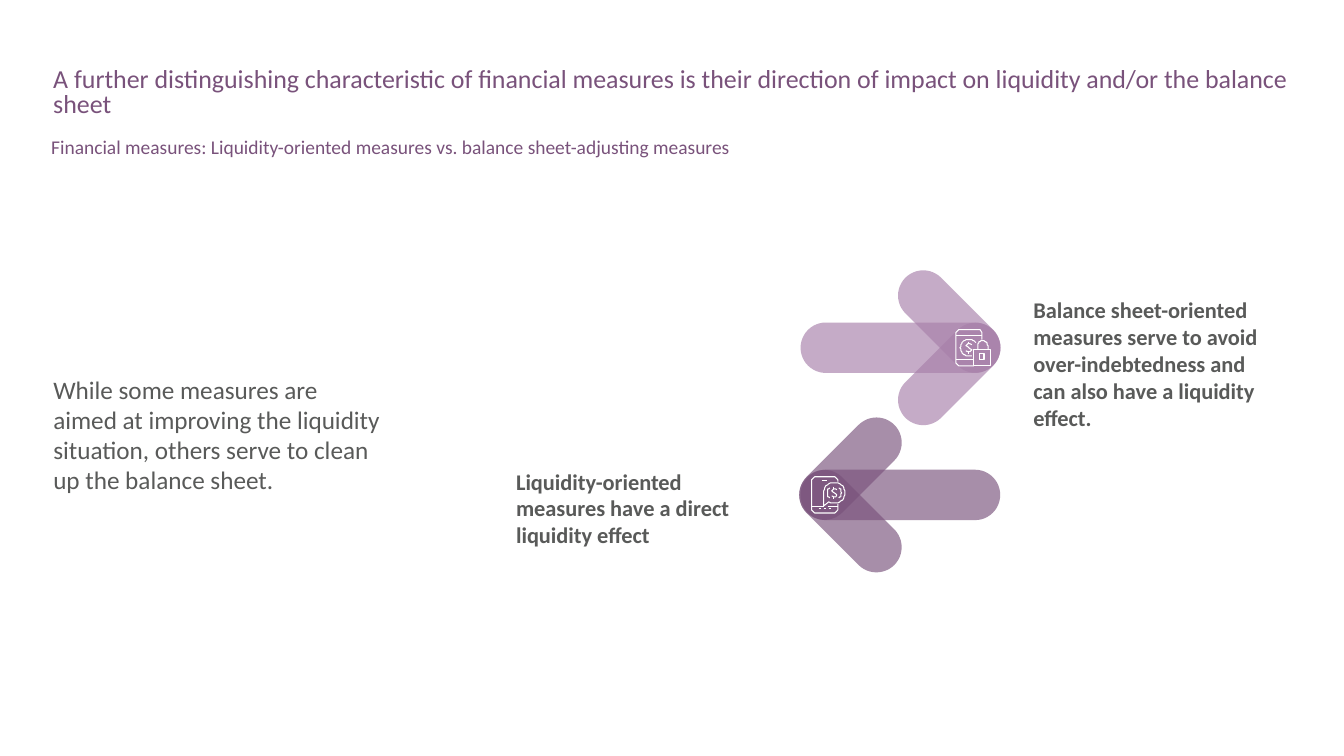
import dataclasses
import math

import lxml.etree
import pptx
import pptx.dml.color
import pptx.enum.shapes
import pptx.enum.text
import pptx.oxml.ns
import pptx.util

Inches = pptx.util.Inches
Anchor = pptx.enum.text.MSO_ANCHOR


@dataclasses.dataclass(frozen=True)
class Theme:
    """Colours, font and type sizes of the slide."""
    font: str = "Calibri"
    grey: str = "595A59"
    plum: str = "79527B"
    lilac: str = "A77FA9"
    white: str = "FFFFFF"
    title: float = 18.5
    subtitle: float = 13.9
    body: float = 18
    label: float = 16
    stroke: float = 0.75
    opacity: int = 65


def colour(value):
    """Turn a hex string into a colour."""
    return pptx.dml.color.RGBColor.from_string(value)


def apply(target, values):
    """Set every named format value on the target."""
    for name, value in values.items():
        setattr(target, name, value)


def arc(x, y, radius, start, end):
    """Return points along an arc, with angles clockwise in degrees."""
    steps = max(2, round(abs(end - start) / 10))
    angles = [math.radians(start + (end - start) * i / steps) for i in range(steps + 1)]
    return [(x + radius * math.cos(a), y + radius * math.sin(a)) for a in angles]


def box(left, top, right, bottom):
    """Return a closed rectangular stroke."""
    return [(left, top), (right, top), (right, bottom), (left, bottom), (left, top)]


def dollar(x, y):
    """Return the strokes of a dollar sign centred on a point."""
    curve = [(2.5, -3), (1, -4.3), (-1, -4.3), (-2.5, -2.5), (-1.5, -0.6),
             (1.5, 0.6), (2.5, 2.5), (1, 4.3), (-1, 4.3), (-2.5, 3)]
    strokes = [curve, [(0, -6), (0, -4.3)], [(0, 4.3), (0, 6)]]
    return [[(x + dx, y + dy) for dx, dy in stroke] for stroke in strokes]


class SlideBuilder:
    """Draws themed elements on the current slide."""

    def __init__(self, slide, theme):
        self.slide = slide
        self.theme = theme

    def text(self, bounds, words, size, tint, bold=False, spacing=None, anchor=Anchor.TOP):
        """Add a wrapped text box."""
        shape = self.slide.shapes.add_textbox(*map(Inches, bounds))
        frame = shape.text_frame
        apply(frame, {"word_wrap": True, "vertical_anchor": anchor})
        paragraph = frame.paragraphs[0]
        paragraph.text = words
        apply(paragraph, {"line_spacing": spacing})
        for run in paragraph.runs:
            apply(run.font, {"name": self.theme.font, "size": pptx.util.Pt(size), "bold": bold})
            run.font.color.rgb = colour(tint)

    def bar(self, left, top, width, rotation, tint):
        """Add a translucent bar with round ends."""
        kind = pptx.enum.shapes.MSO_SHAPE.ROUNDED_RECTANGLE
        shape = self.slide.shapes.add_shape(kind, *map(Inches, (left, top, width, 0.5)))
        shape.adjustments[0] = 0.5
        shape.rotation = rotation
        shape.shadow.inherit = False
        shape.fill.solid()
        shape.fill.fore_color.rgb = colour(tint)
        shape.line.fill.background()
        tint_element = shape.fill._xPr.find(".//" + pptx.oxml.ns.qn("a:srgbClr"))
        alpha = lxml.etree.SubElement(tint_element, pptx.oxml.ns.qn("a:alpha"))
        alpha.set("val", str(self.theme.opacity * 1000))

    def arrow(self, shaft_left, shaft_top, head_left, turn, tint):
        """Add an arrow made of a shaft and two slanted bars."""
        self.bar(shaft_left, shaft_top, 1.98, turn, tint)
        side = 1 if turn == 0 else -1
        for slant, offset in ((315, 0.26), (45, -0.26)):
            self.bar(head_left, shaft_top + side * offset, 1.23, (slant + turn) % 360, tint)

    def icon(self, left, top, strokes):
        """Add a white line icon from strokes in hundredths of an inch."""
        first, *others = strokes
        builder = self.slide.shapes.build_freeform(*first[0], scale=Inches(0.01))
        builder.add_line_segments(first[1:], close=False)
        for stroke in others:
            builder.move_to(*stroke[0])
            builder.add_line_segments(stroke[1:], close=False)
        shape = builder.convert_to_shape(Inches(left), Inches(top))
        shape.shadow.inherit = False
        shape.fill.background()
        shape.line.fill.solid()
        shape.line.fill.fore_color.rgb = colour(self.theme.white)
        shape.line.width = pptx.util.Pt(self.theme.stroke)


PHONE_WITH_LOCK = [
    [(18, 35.5), (3, 35.5), (0.5, 33), (0.5, 3), (3, 0.5), (24, 0.5), (26.5, 3), (26.5, 10)],
    [(0.5, 5.5), (26.5, 5.5)],
    [(0.5, 30.5), (18, 30.5)],
    arc(13, 18, 8.5, 70, 320),
    *dollar(13, 18),
    box(18.5, 19.5, 34.5, 35.5),
    [(21.5, 19.5), *arc(26.5, 16, 5, 180, 360), (31.5, 19.5)],
    box(24.5, 24, 27.5, 30.5),
]
PHONE_WITH_COIN = [
    [(25.5, 27), (25.5, 33), (23, 35.5), (3, 35.5), (0.5, 33),
     (0.5, 3), (3, 0.5), (23, 0.5), (25.5, 3), (25.5, 5)],
    [(0.5, 29.5), (11.5, 29.5)],
    [(16, 29.5), (25.5, 29.5)],
    [(11.5, 29), *arc(22.5, 16, 10.5, 180, 480), (11.5, 29)],
    arc(22.5, 16, 7, -50, 50),
    arc(22.5, 16, 7, 130, 230),
    *dollar(22.5, 16),
    [(10, 3.5), (15, 3.5)],
    *[[(x, 32.5), (x + 2, 32.5)] for x in (7, 12, 17)],
]


def main():
    """Build the slide and save it."""
    presentation = pptx.Presentation()
    apply(presentation, {"slide_width": Inches(13.33), "slide_height": Inches(7.5)})
    theme = Theme()
    slide = SlideBuilder(presentation.slides.add_slide(presentation.slide_layouts[6]), theme)

    slide.text((0.43, 1.79, 3.49, 5.04),
               "While some measures are aimed at improving the liquidity situation, "
               "others serve to clean up the balance sheet.",
               theme.body, theme.grey, anchor=Anchor.MIDDLE)
    slide.text((0.43, 0.63, 12.54, 0.64),
               "A further distinguishing characteristic of financial measures is their "
               "direction of impact on liquidity and/or the balance sheet",
               theme.title, theme.plum, spacing=0.8)
    slide.text((0.41, 1.35, 12.56, 0.28),
               "Financial measures: Liquidity-oriented measures vs. "
               "balance sheet-adjusting measures",
               theme.subtitle, theme.plum, spacing=0.7)

    slide.arrow(7.94, 3.2, 8.8, 0, theme.lilac)
    slide.arrow(7.94, 4.66, 7.82, 180, theme.plum)
    slide.icon(9.48, 3.27, PHONE_WITH_LOCK)
    slide.icon(8.05, 4.73, PHONE_WITH_COIN)

    slide.text((5.02, 4.59, 2.69, 0.91),
               "Liquidity-oriented measures have a direct liquidity effect",
               theme.label, theme.grey, bold=True)
    slide.text((10.15, 2.89, 2.64, 1.45),
               "Balance sheet-oriented \vmeasures serve to avoid \v"
               "over-indebtedness and can also have a liquidity effect.",
               theme.label, theme.grey, bold=True)
    presentation.save("out.pptx")


if __name__ == "__main__":
    main()
